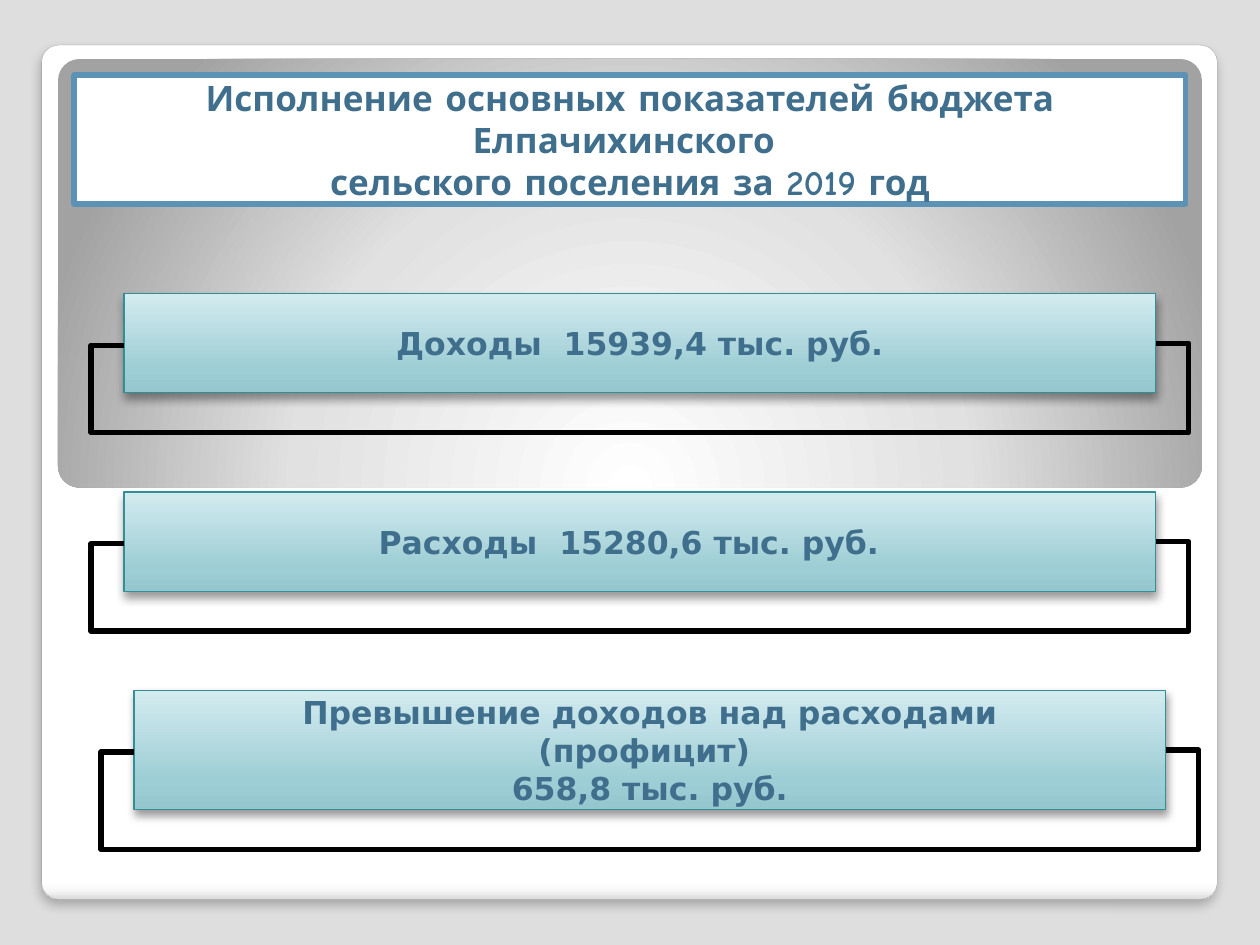
from dataclasses import dataclass

from lxml import etree
from pptx import Presentation
from pptx import util as u
from pptx.dml.color import RGBColor
from pptx.enum import shapes, text
from pptx.oxml.ns import qn


@dataclass(frozen=True)
class Theme:
    background: str = "DEDEDE"
    white: str = "FFFFFF"
    ink: str = "406F8D"
    title_border: str = "5C92B5"
    bar_border: str = "328E97"
    card_border: str = "A4A4A4"
    bracket: str = "000000"
    card_stops: tuple = ((0, "FFFFFF"), (98, "FFFFFF"), (99, "F7F7F7"), (100, "DADADA"))
    panel_stops: tuple = ((0, "FFFFFF"), (55, "E1E1E1"), (100, "A2A2A2"))
    bar_stops: tuple = ((0, "96C7CE"), (25, "9ECED5"), (100, "D3EBEF"))
    title_font: str = "Comic Neue"
    body_font: str = "DejaVu Sans"
    title_size: int = 20
    body_size: int = 18


def sub(parent, tag, **attrs):
    return etree.SubElement(parent, qn(tag), {k: str(v) for k, v in attrs.items()})


def percent(value):
    return round(value * 1000)


class SlideBuilder:
    def __init__(self, prs, theme):
        self.theme = theme
        self.s = prs.slides.add_slide(prs.slide_layouts[5])
        fill = self.s.background.fill
        fill.solid()
        fill.fore_color.rgb = RGBColor.from_string(theme.background)

    def gradient(self, sp, stops, angle=None, center=None):
        """Fill linearly at a clockwise angle, or in circles around center (x, y in percent)."""
        sp.fill.gradient()
        grad = sp._element.spPr.find(qn("a:gradFill"))
        for child in list(grad):
            grad.remove(child)
        gs_list = sub(grad, "a:gsLst")
        for pos, color in stops:
            sub(sub(gs_list, "a:gs", pos=percent(pos)), "a:srgbClr", val=color)
        if center:
            x, y = center
            sub(sub(grad, "a:path", path="circle"), "a:fillToRect", l=percent(x),
                t=percent(y), r=percent(100 - x), b=percent(100 - y))
        else:
            sub(grad, "a:lin", ang=angle * 60000, scaled=0)

    def outline(self, sp, color, width):
        sp.line.color.rgb = RGBColor.from_string(color)
        sp.line.width = u.Pt(width)

    def shadow(self, sp, alpha, blur, dist):
        effects = sp._element.spPr.find(qn("a:effectLst"))
        shade = sub(effects, "a:outerShdw", blurRad=u.Pt(blur), dist=u.Pt(dist),
                    dir=90 * 60000, algn="t", rotWithShape=0)
        sub(sub(shade, "a:srgbClr", val="000000"), "a:alpha", val=percent(alpha))

    def label(self, sp, content, font, size):
        tf = sp.text_frame
        tf.text = content
        tf.word_wrap = True
        tf.auto_size = text.MSO_AUTO_SIZE.NONE
        tf.vertical_anchor = text.MSO_ANCHOR.MIDDLE
        for p in tf.paragraphs:
            p.alignment = text.PP_ALIGN.CENTER
            for r in p.runs:
                r.font.name, r.font.size, r.font.bold = font, u.Pt(size), True
                r.font.color.rgb = RGBColor.from_string(self.theme.ink)

    def shape(self, kind, box):
        sp = self.s.shapes.add_shape(kind, *map(u.Cm, box))
        sp.shadow.inherit = False
        return sp

    def rounded(self, box, radius):
        sp = self.shape(shapes.MSO_SHAPE.ROUNDED_RECTANGLE, box)
        sp.adjustments[0] = radius
        return sp

    def card(self, box):
        sp = self.rounded(box, 0.02)
        self.gradient(sp, self.theme.card_stops, angle=90)
        self.outline(sp, self.theme.card_border, 0.16)
        self.shadow(sp, 25, 6, 4)

    def panel(self, box):
        sp = self.rounded(box, 0.05)
        self.gradient(sp, self.theme.panel_stops, center=(50, 175))
        sp.line.fill.background()

    def title(self, content, box):
        sp = self.s.shapes.title
        sp.left, sp.top, sp.width, sp.height = map(u.Cm, box)
        sp.fill.solid()
        sp.fill.fore_color.rgb = RGBColor.from_string(self.theme.white)
        self.outline(sp, self.theme.title_border, 3.35)
        self.label(sp, content, self.theme.title_font, self.theme.title_size)
        self.s.shapes._spTree.append(sp._element)  # in front of the panels

    def bar(self, content, box):
        sp = self.shape(shapes.MSO_SHAPE.RECTANGLE, box)
        self.gradient(sp, self.theme.bar_stops, angle=270)
        self.outline(sp, self.theme.bar_border, 0.75)
        self.shadow(sp, 40, 5.2, 3)
        self.label(sp, content, self.theme.body_font, self.theme.body_size)

    def bracket(self, box, overhang=0.66, below=0.8, rise=0.04):
        """Join both sides of a bar with a line that runs around and below it."""
        left, top, width, height = box
        end_y = top + height / 2
        cx = self.s.shapes.add_connector(
            shapes.MSO_CONNECTOR.ELBOW, u.Cm(left), u.Cm(end_y + rise),
            u.Cm(left + width), u.Cm(end_y))
        self.outline(cx, self.theme.bracket, 3)
        sp_pr = cx._element.spPr
        sub(sp_pr, "a:effectLst")
        xfrm = sp_pr.find(qn("a:xfrm"))
        xfrm.attrib.pop("flipV", None)
        xfrm.set("rot", str(180 * 60000))
        xfrm.set("flipH", "1")
        geom = sp_pr.find(qn("a:prstGeom"))
        geom.set("prst", "bentConnector5")
        guides = geom.find(qn("a:avLst"))
        if guides is None:
            guides = sub(geom, "a:avLst")
        drop = height / 2 + below - rise
        ratios = (-overhang / width, -drop / rise, 1 + overhang / width)
        for i, ratio in enumerate(ratios, 1):
            sub(guides, "a:gd", name=f"adj{i}", fmla=f"val {round(ratio * 100000)}")


def main():
    prs = Presentation()
    prs.slide_width, prs.slide_height = u.Cm(25.4), u.Cm(19.05)
    slide = SlideBuilder(prs, Theme())
    slide.card((0.84, 0.91, 23.7, 17.22))
    slide.panel((1.17, 1.19, 23.06, 8.64))
    slide.title("Исполнение основных показателей бюджета Елпачихинского \n"
                "сельского поселения за 2019 год", (1.5, 1.52, 22.4, 2.59))

    first_top, pitch, width = 5.92, 4, 20.8
    rows = [
        ("Доходы  15939,4 тыс. руб.", 2.5, 2),
        ("Расходы  15280,6 тыс. руб.  ", 2.5, 2),
        ("Превышение доходов над расходами\n(профицит) \n658,8 тыс. руб.", 2.7, 2.4),
    ]
    boxes = [(left, first_top + i * pitch, width, height)
             for i, (_, left, height) in enumerate(rows)]
    for (content, _, _), box in zip(rows, boxes):
        slide.bar(content, box)
    for box in boxes:
        slide.bracket(box)
    prs.save("out.pptx")


if __name__ == "__main__":
    main()
